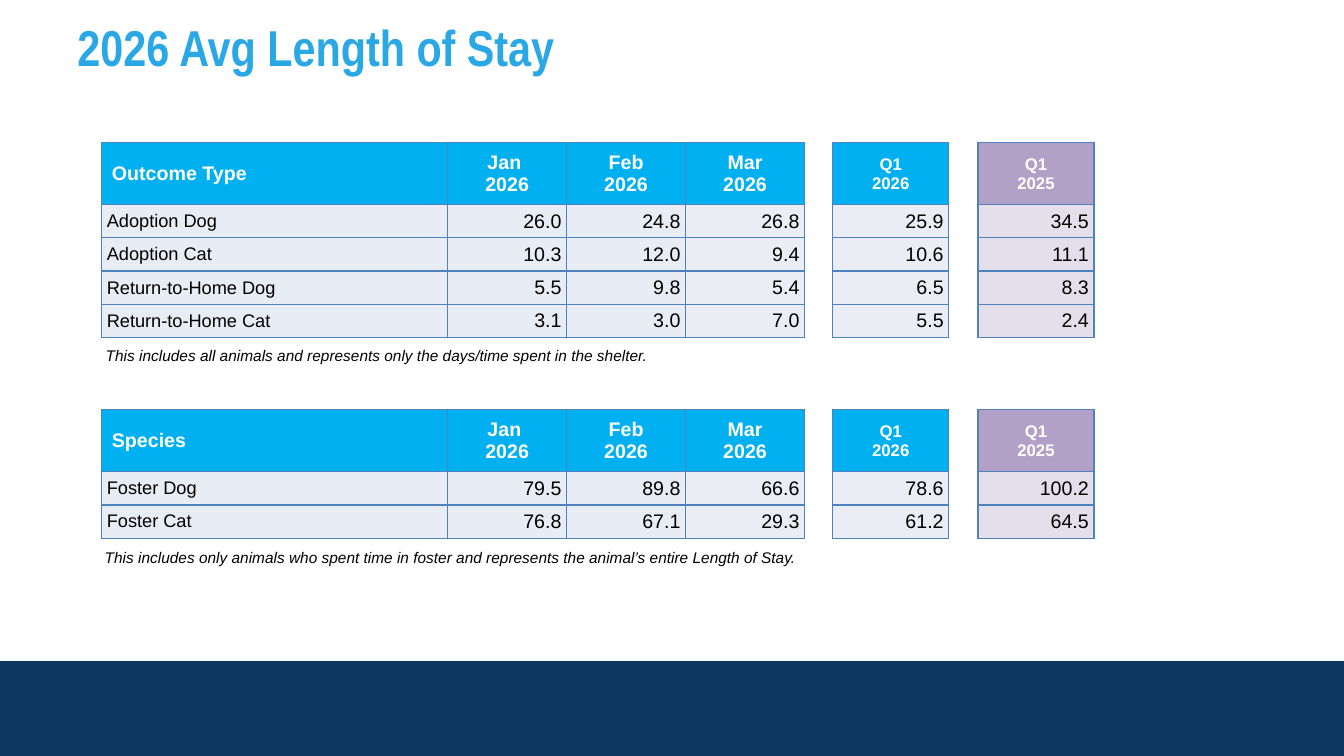
"""Build the average length of stay slide."""
from dataclasses import dataclass

from lxml.etree import fromstring
from pptx import Presentation
from pptx.dml.color import RGBColor as RGB
from pptx.enum.shapes import MSO_SHAPE as SHAPE
from pptx.enum.text import MSO_ANCHOR as ANCHOR, PP_ALIGN as ALIGN
from pptx.util import Inches, Pt


@dataclass(frozen=True)
class Theme:
    footer: str = "0B3761"
    title: str = "2AA7E5"
    header: str = "00B0F0"
    monthly: str = "E8ECF4"
    latest: str = "EAEEF4"
    prior_header: str = "B2A0C7"
    prior: str = "E5DFEC"
    border: str = "4F81BD"
    white: str = "FFFFFF"
    black: str = "000000"
    title_size: int = 36
    value_size: int = 14
    label_size: int = 13
    quarter_size: int = 12
    note_size: int = 11
    font: str = "Arial"
    title_font: str = "Arial Narrow"


THEME = Theme()
HEADER_HEIGHT, ROW_HEIGHT = 0.62, 0.33
MONTHS = ["Jan \n2026", "Feb\n2026", "Mar\n2026"]
MONTH_WIDTHS = [3.43, 1.18, 1.18, 1.18]
MONTH_FILLS = [THEME.monthly] * 3 + [THEME.latest]
QUARTERS = [
    (8.26, "Q1\n2026", THEME.header, THEME.latest),
    (9.7, "Q1\n2025", THEME.prior_header, THEME.prior),
]
SECTIONS = [
    (1.41, "Outcome Type", [
        ["Adoption Dog", "26.0", "24.8", "26.8", "25.9", "34.5"],
        ["Adoption Cat", "10.3", "12.0", "9.4", "10.6", "11.1"],
        ["Return-to-Home Dog", "5.5", "9.8", "5.4", "6.5", "8.3"],
        ["Return-to-Home Cat", "3.1", "3.0", "7.0", "5.5", "2.4"],
    ]),
    (4.06, "Species", [
        ["Foster Dog", "79.5", "89.8", "66.6", "78.6", "100.2"],
        ["Foster Cat", "76.8", "67.1", "29.3", "61.2", "64.5"],
    ]),
]
NOTES = [
    (0.95, 3.38, "This includes all animals and represents only the days/time spent in the shelter."),
    (0.94, 5.39, "This includes only animals who spent time in foster and represents "
                 "the animal’s entire Length of Stay."),
]


def assign(target, values):
    """Set every attribute in values on the target."""
    for name, value in values.items():
        setattr(target, name, value)


def style_text(frame, size, color, align=ALIGN.LEFT, font=THEME.font, bold=False, italic=False):
    """Format all paragraphs of a text frame."""
    for paragraph in frame.paragraphs:
        paragraph.alignment = align
        assign(paragraph.font, {"name": font, "size": Pt(size), "bold": bold, "italic": italic})
        paragraph.font.color.rgb = RGB.from_string(color)


def add_text(slide, box, text, anchor, **style):
    """Add one wrapped text box."""
    frame = slide.shapes.add_textbox(*map(Inches, box)).text_frame
    assign(frame, {"text": text, "word_wrap": True, "vertical_anchor": anchor})
    style_text(frame, **style)


def add_footer(slide):
    """Draw the band along the bottom edge."""
    band = slide.shapes.add_shape(SHAPE.RECTANGLE, *map(Inches, (0, 6.56, 13.33, 0.94)))
    band.shadow.inherit = False
    band.fill.solid()
    band.fill.fore_color.rgb = RGB.from_string(THEME.footer)
    band.line.fill.background()


def add_borders(cell):
    """Outline a cell on all four sides."""
    namespace = "http://schemas.openxmlformats.org/drawingml/2006/main"
    properties = cell._tc.get_or_add_tcPr()
    for position, side in enumerate("LRTB"):
        properties.insert(position, fromstring(
            f'<a:ln{side} xmlns:a="{namespace}" w="{Pt(1)}"><a:solidFill>'
            f'<a:srgbClr val="{THEME.border}"/></a:solidFill></a:ln{side}>'))


def fill_cell(cell, text, fill, margins, **style):
    """Write and format one table cell."""
    sides = ("margin_left", "margin_top", "margin_right", "margin_bottom")
    assign(cell, {"text": text, "vertical_anchor": ANCHOR.MIDDLE})
    assign(cell, dict(zip(sides, map(Inches, margins))))
    cell.fill.solid()
    cell.fill.fore_color.rgb = RGB.from_string(fill)
    add_borders(cell)
    style_text(cell.text_frame, **style)


def add_stay_table(slide, left, top, widths, headings, rows, header_fill, fills, header_size):
    """Add a table with a header row and rows of stay lengths."""
    heights = [HEADER_HEIGHT] + [ROW_HEIGHT] * len(rows)
    box = map(Inches, (left, top, sum(widths), sum(heights)))
    table = slide.shapes.add_table(len(heights), len(widths), *box).table
    for column, width in zip(table.columns, widths):
        column.width = Inches(width)
    for row, height in zip(table.rows, heights):
        row.height = Inches(height)
    for c, heading in enumerate(headings):
        fill_cell(table.cell(0, c), heading, header_fill, (0.1, 0.01, 0.1, 0),
                  size=header_size, color=THEME.white, bold=True,
                  align=ALIGN.CENTER if "\n" in heading else ALIGN.LEFT)
    for r, row in enumerate(rows, 1):
        for c, text in enumerate(row):
            is_label = len(row) > 1 and c == 0
            fill_cell(table.cell(r, c), text, fills[c],
                      (0.05,) * 4 if is_label else (0, 0, 0.05, 0),
                      size=THEME.label_size if is_label else THEME.value_size,
                      color=THEME.black, align=ALIGN.LEFT if is_label else ALIGN.RIGHT)


def add_section(slide, top, heading, rows):
    """Add the monthly table and its two quarter tables."""
    add_stay_table(slide, 1.01, top, MONTH_WIDTHS, [heading] + MONTHS,
                   [row[:4] for row in rows], THEME.header, MONTH_FILLS, THEME.value_size)
    for index, (left, quarter, header_fill, fill) in enumerate(QUARTERS, 4):
        add_stay_table(slide, left, top, [1.15], [quarter], [[row[index]] for row in rows],
                       header_fill, [fill], THEME.quarter_size)


def main():
    """Build and save the slide."""
    deck = Presentation()
    assign(deck, {"slide_width": Inches(13.33), "slide_height": Inches(7.5)})
    slide = deck.slides.add_slide(deck.slide_layouts[6])
    add_footer(slide)
    add_text(slide, (0.67, 0.18, 12, 0.56), "2026 Avg Length of Stay", ANCHOR.MIDDLE,
             size=THEME.title_size, color=THEME.title, font=THEME.title_font, bold=True)
    for section in SECTIONS:
        add_section(slide, *section)
    for left, top, note in NOTES:
        add_text(slide, (left, top, 9.85, 0.29), note, ANCHOR.TOP,
                 size=THEME.note_size, color=THEME.black, italic=True)
    deck.save("out.pptx")


if __name__ == "__main__":
    main()
